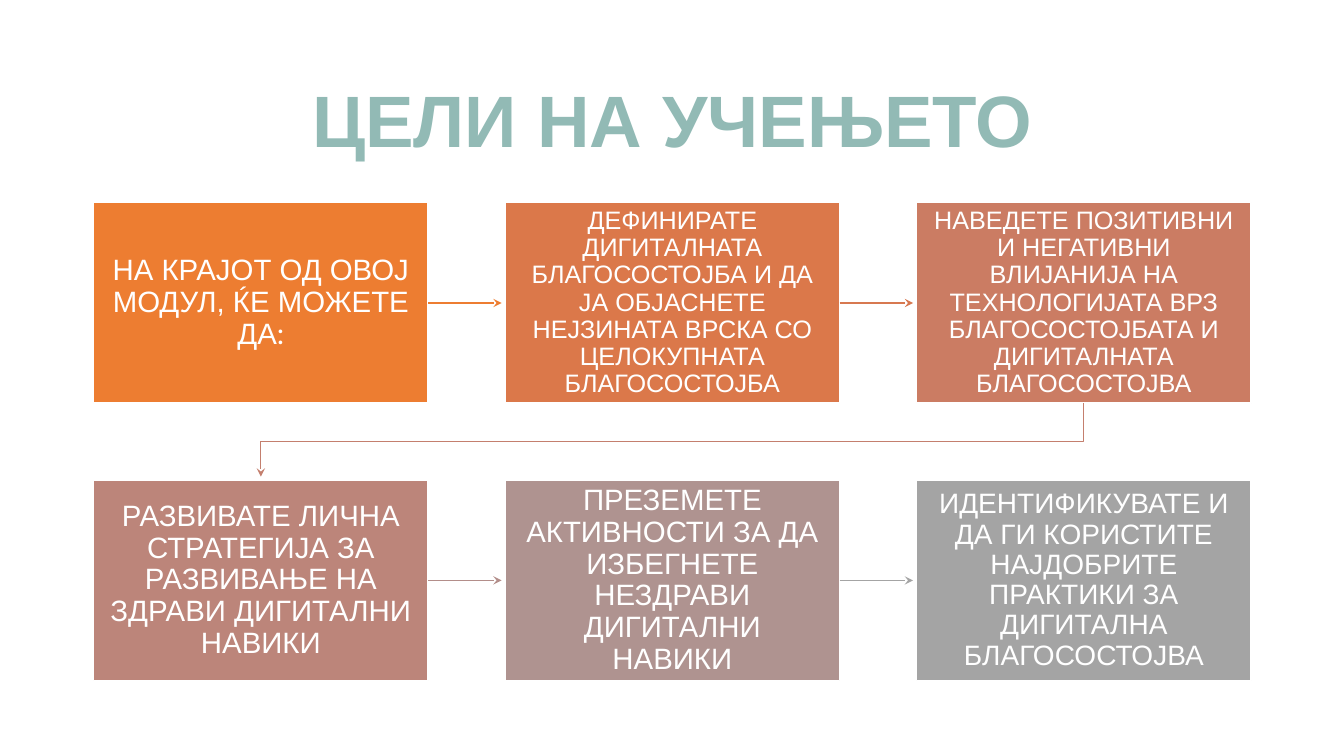
from lxml import etree
from pptx import Presentation
from pptx import util as u
from pptx.dml.color import RGBColor
from pptx.enum import shapes, text
from pptx.oxml.ns import qn

COLORS = {
    "title": "92BAB5", "white": "FFFFFF",
    "box1": "ED7D31", "box2": "DB784A", "box3": "CB7C63",
    "box4": "BC857A", "box5": "AF9390", "box6": "A4A4A4",
    "arrow1": "ED7D31", "arrow2": "D77850", "arrow3": "C47F6E",
    "arrow4": "B38E8A", "arrow5": "A4A4A4",
}
# Each step: text runs as (wording, font), and font size
STEPS = [
    ([("НА КРАЈОТ ОД ОВОЈ МОДУЛ, ЌЕ МОЖЕТЕ ДА", "Arial"), (":", "Lato")], 21),
    ([("ДЕФИНИРАТЕ ДИГИТАЛНАТА БЛАГОСОСТОЈБА И ДА ЈА ОБЈАСНЕТЕ "
       "НЕЈЗИНАТА ВРСКА СО ЦЕЛОКУПНАТА БЛАГОСОСТОЈБА", "Arial")], 18),
    ([("НАВЕДЕТЕ ПОЗИТИВНИ И НЕГАТИВНИ ВЛИЈАНИЈА НА ТЕХНОЛОГИЈАТА ВРЗ "
       "БЛАГОСОСТОЈБАТА И ДИГИТАЛНАТА БЛАГОСОСТОЈВА", "Arial")], 18),
    ([("РАЗВИВАТЕ ЛИЧНА СТРАТЕГИЈА ЗА РАЗВИВАЊЕ НА ЗДРАВИ ДИГИТАЛНИ "
       "НАВИКИ", "Arial")], 21),
    ([("ПРЕЗЕМЕТЕ АКТИВНОСТИ ЗА ДА ИЗБЕГНЕТЕ НЕЗДРАВИ ДИГИТАЛНИ "
       "НАВИКИ", "Arial")], 21),
    ([("ИДЕНТИФИКУВАТЕ И ДА ГИ КОРИСТИТЕ НАЈДОБРИТЕ ПРАКТИКИ ЗА "
       "ДИГИТАЛНА БЛАГОСОСТОЈВА", "Arial")], 20),
]
COLUMNS = 3
LEFT, TOP = 2.36, 5.11
WIDTH, HEIGHT = 8.43, 5.05
COLUMN_STEP, ROW_STEP = 10.37, 6.99
ARROW_LENGTH = 1.85
RIGHT_SIDE = 3


def color(name):
    return RGBColor.from_string(COLORS[name])


def apply(target, **values):
    for name, value in values.items():
        setattr(target, name, value)


class FlowSlide:
    """Holds the shared style and the slide being drawn."""

    margins = {"margin_left": u.Cm(0.41), "margin_right": u.Cm(0.41),
               "margin_top": u.Cm(0.43), "margin_bottom": u.Cm(0.43)}

    def __init__(self, presentation):
        self.shapes = presentation.slides.add_slide(presentation.slide_layouts[6]).shapes

    def set_text(self, shape, runs, size, color_name, bold=False):
        frame = shape.text_frame
        apply(frame, word_wrap=True, vertical_anchor=text.MSO_ANCHOR.MIDDLE)
        paragraph = frame.paragraphs[0]
        apply(paragraph, alignment=text.PP_ALIGN.CENTER, line_spacing=0.9)
        for wording, font_name in runs:
            run = paragraph.add_run()
            run.text = wording
            apply(run.font, name=font_name, size=u.Pt(size), bold=bold)
            run.font.color.rgb = color(color_name)

    def title(self, wording):
        box = self.shapes.add_textbox(u.Cm(2.34), u.Cm(1.55), u.Cm(29.21), u.Cm(3.15))
        self.set_text(box, [(wording, "Arial")], 52, "title", bold=True)

    def box(self, left, top, runs, size, color_name):
        shape = self.shapes.add_shape(shapes.MSO_SHAPE.RECTANGLE, u.Cm(left),
                                      u.Cm(top), u.Cm(WIDTH), u.Cm(HEIGHT))
        shape.shadow.inherit = False
        shape.fill.solid()
        shape.fill.fore_color.rgb = color(color_name)
        shape.line.color.rgb = color("white")
        shape.line.width = u.Pt(1)
        apply(shape.text_frame, **self.margins)
        self.set_text(shape, runs, size, "white")
        return shape

    def style_arrow(self, shape, color_name):
        shape.line.color.rgb = color(color_name)
        shape.line.width = u.Pt(0.75)
        outline = shape._element.spPr.find(qn("a:ln"))
        etree.SubElement(outline, qn("a:tailEnd"), type="stealth")

    def arrow(self, box, color_name):
        """Points from the box's right side towards the next box in the row."""
        x, y = box.left + box.width, box.top + box.height // 2
        connector = self.shapes.add_connector(
            shapes.MSO_CONNECTOR.STRAIGHT, x, y, x + u.Cm(ARROW_LENGTH), y)
        connector.begin_connect(box, RIGHT_SIDE)
        self.style_arrow(connector, color_name)
        etree.SubElement(connector._element.spPr, qn("a:effectLst"))

    def row_break(self, box, color_name):
        """Leads from under the last box of a row to above the first of the next."""
        start_x, start_y = box.left + box.width // 2, box.top + box.height
        end_x = u.Cm(LEFT + WIDTH / 2)
        middle_y = start_y + u.Cm((ROW_STEP - HEIGHT) / 2)
        builder = self.shapes.build_freeform(start_x, start_y)
        builder.add_line_segments(
            [(start_x, middle_y), (end_x, middle_y),
             (end_x, start_y + u.Cm(ARROW_LENGTH))], close=False)
        bent_arrow = builder.convert_to_shape()
        bent_arrow.shadow.inherit = False
        bent_arrow.fill.background()
        self.style_arrow(bent_arrow, color_name)


def main():
    presentation = Presentation()
    apply(presentation, slide_width=u.Cm(33.87), slide_height=u.Cm(19.05))
    slide = FlowSlide(presentation)
    slide.title("ЦЕЛИ НА УЧЕЊЕТО")
    for index, (runs, size) in enumerate(STEPS):
        row, column = divmod(index, COLUMNS)
        number = index + 1
        box = slide.box(LEFT + column * COLUMN_STEP, TOP + row * ROW_STEP,
                        runs, size, f"box{number}")
        if number == len(STEPS):
            break
        if column == COLUMNS - 1:
            slide.row_break(box, f"arrow{number}")
        else:
            slide.arrow(box, f"arrow{number}")
    presentation.save("out.pptx")


if __name__ == "__main__":
    main()
